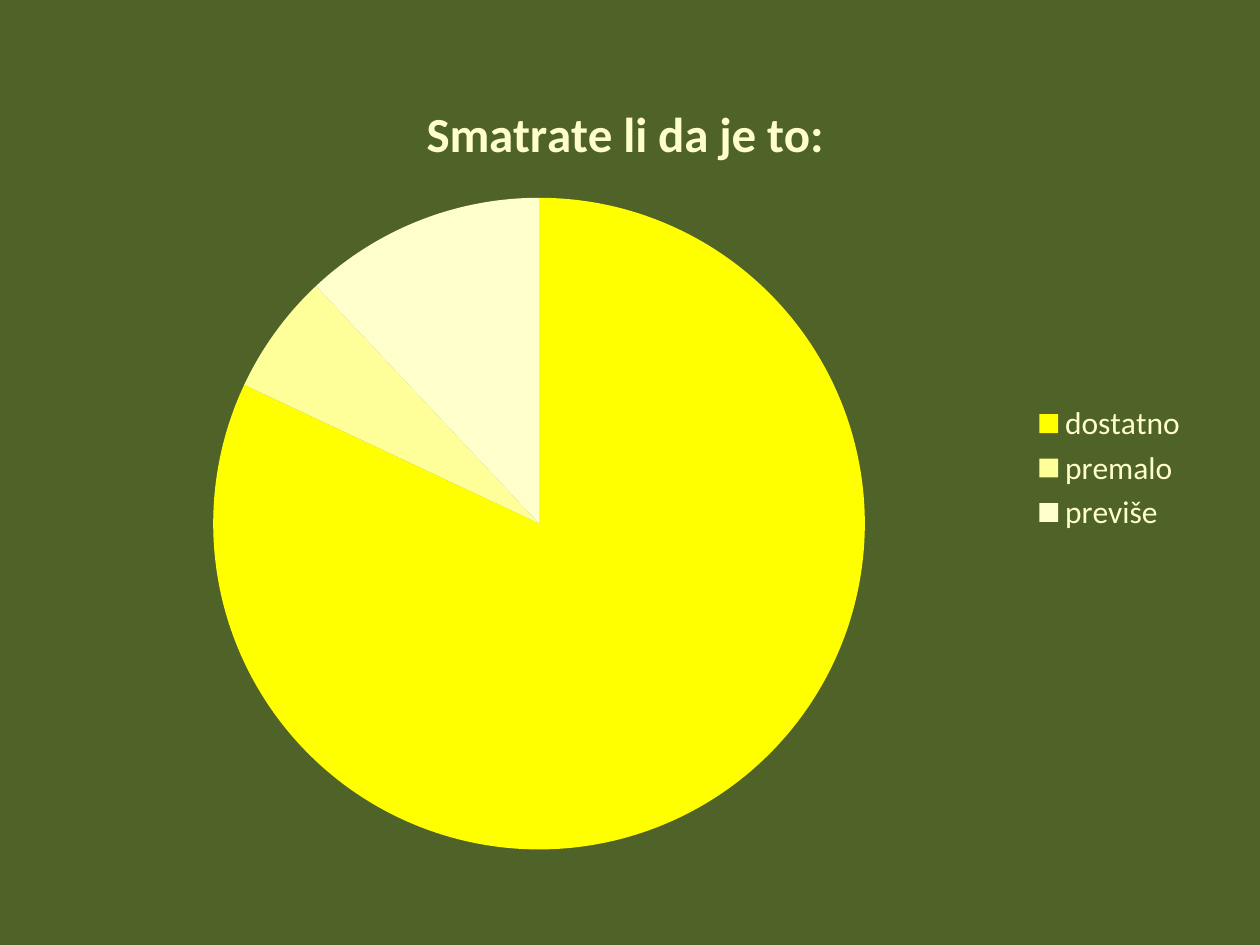
import pptx
import pptx.chart.data
import pptx.dml.color
import pptx.enum.chart
import pptx.util
from pptx.util import Inches

FONT = "Calibri"
BACKGROUND = "4F6228"
CREAM = "FFFFCC"
TITLE = "Smatrate li da je to:"
ANSWERS = [("dostatno", 82, "FFFF00"), ("premalo", 6, "FFFF99"), ("previše", 12, CREAM)]


def set_fill(fill, color):
    fill.solid()
    fill.fore_color.rgb = pptx.dml.color.RGBColor.from_string(color)


def set_font(font, size, color, bold=False):
    font.name = FONT
    font.size = pptx.util.Pt(size)
    font.bold = bold
    set_fill(font.fill, color)


def add_answer_pie(s, left, top, width, height):
    data = pptx.chart.data.CategoryChartData()
    data.categories = [name for name, _, _ in ANSWERS]
    data.add_series(TITLE, [value for _, value, _ in ANSWERS])
    chart = s.shapes.add_chart(
        pptx.enum.chart.XL_CHART_TYPE.PIE, left, top, width, height, data
    ).chart
    set_font(chart.font, 18, "000000")

    chart.has_title = True
    tf = chart.chart_title.text_frame
    tf.text = TITLE
    set_font(tf.paragraphs[0].runs[0].font, 28, CREAM, bold=True)
    chart.chart_title.include_in_layout = False

    chart.has_legend = True
    chart.legend.position = pptx.enum.chart.XL_LEGEND_POSITION.RIGHT
    chart.legend.include_in_layout = False
    set_font(chart.legend.font, 18, CREAM)

    plot = chart.plots[0]
    plot.vary_by_categories = True
    for i, (_, _, color) in enumerate(ANSWERS):
        set_fill(plot.series[0].points[i].format.fill, color)


def main():
    prs = pptx.Presentation()
    prs.slide_width, prs.slide_height = Inches(10), Inches(7.5)
    s = prs.slides.add_slide(prs.slide_layouts[6])
    set_fill(s.background.fill, BACKGROUND)
    add_answer_pie(s, Inches(0.39), Inches(0.55), Inches(9.14), Inches(6.33))
    prs.save("out.pptx")


if __name__ == "__main__":
    main()
